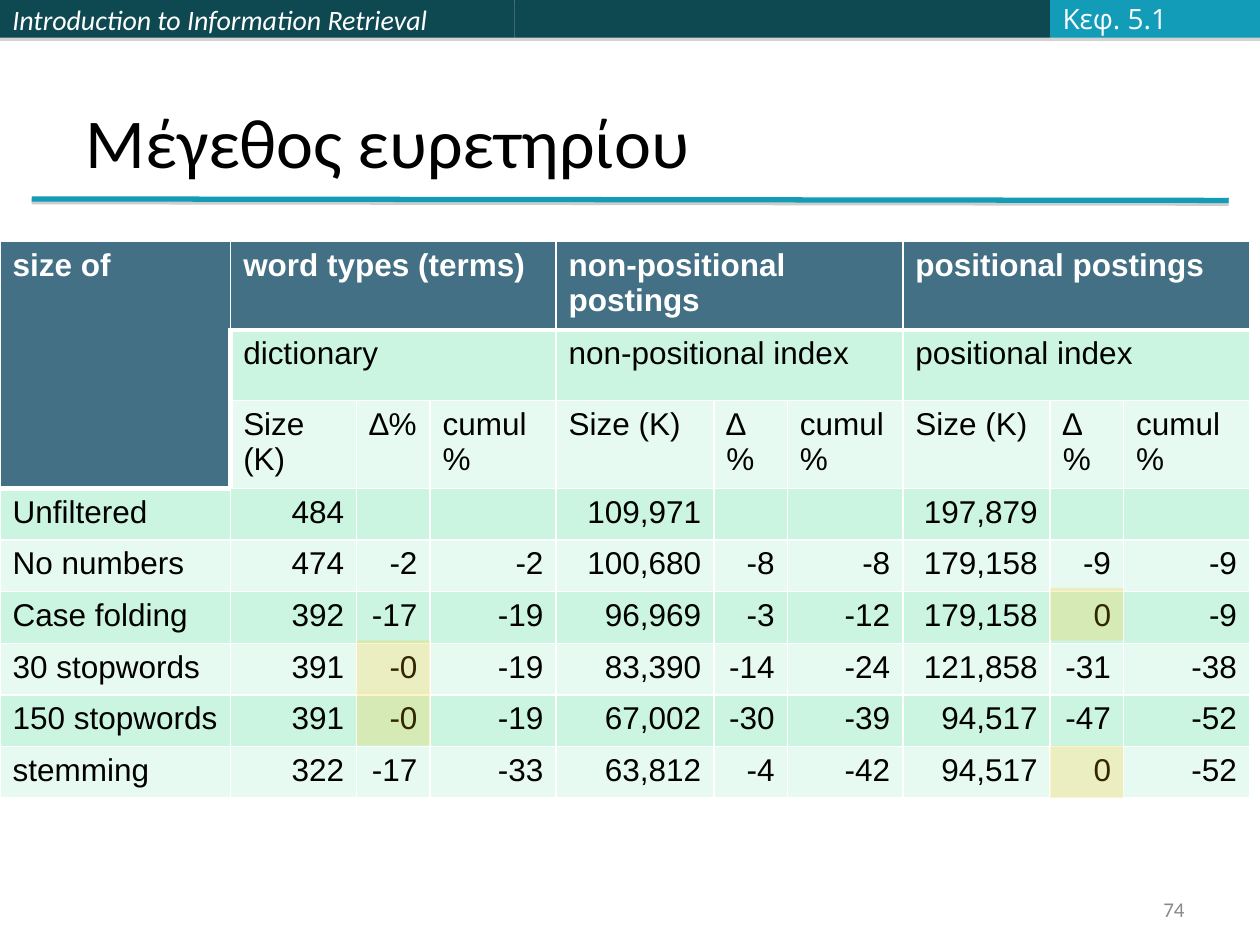
from lxml.etree import SubElement
from pptx import Presentation
from pptx.dml.color import RGBColor
from pptx.enum.shapes import MSO_CONNECTOR, MSO_SHAPE
from pptx.enum.text import MSO_ANCHOR, MSO_AUTO_SIZE, PP_ALIGN
from pptx.oxml.ns import qn
from pptx.util import Cm, Pt

# Content
TITLE = "Μέγεθος ευρετηρίου"
COURSE, PART, PAGE = "Introduction to Information Retrieval", "Κεφ. 5.1", "74"
GROUPS = [
    ("word types (terms)", "dictionary"),
    ("non-positional\npostings", "non-positional index"),
    ("positional postings", "positional index"),
]
HEADS = ["Size (K)", "∆%", "cumul %"] + ["Size (K)", "∆ %", "cumul %"] * 2
DATA = [
    ("Unfiltered", "484", "", "", "109,971", "", "", "197,879", "", ""),
    ("No numbers", "474", "-2", "-2", "100,680", "-8", "-8", "179,158", "-9", "-9"),
    ("Case folding", "392", "-17", "-19", "96,969", "-3", "-12", "179,158", "0", "-9"),
    ("30 stopwords", "391", "-0", "-19", "83,390", "-14", "-24", "121,858", "-31", "-38"),
    ("150 stopwords", "391", "-0", "-19", "67,002", "-30", "-39", "94,517", "-47", "-52"),
    ("stemming", "322", "-17", "-33", "63,812", "-4", "-42", "94,517", "0", "-52"),
]
MARKS = [8, 2, 2, 8]  # marked column in each row from "Case folding" on

THEME = dict(
    dark="0E4851", teal="139CB7", head="437085", odd="CBF5E1", even="E7FAF1",
    mark="FFC000", shade="808080", white="FFFFFF", pale="FBFCFF",
    black="000000", gray="898989",
    title=40, body=18, bar=16, page=12,
)

# Layout in centimetres
WIDE, HIGH = 25.4, 19.05
COLS = [4.65, 2.54, 1.48, 2.54, 3.18, 1.48, 2.33, 2.97, 1.48, 2.54]
ROWS = [1.7, 1.42, 1.09] + [1.04] * len(DATA)
TOP = 4.87
BARS = [(10.37, "dark"), (10.8, "dark"), (4.23, "teal")]
MARK_TOP, MARK_STEP = 11.85, 1.06


def rgb(name):
    return RGBColor.from_string(THEME[name])


def write(frame, words, size="body", font="Calibri", color="black", bold=False,
          italic=False, align=PP_ALIGN.LEFT, anchor=MSO_ANCHOR.MIDDLE, wrap=True):
    frame.word_wrap = wrap
    frame.vertical_anchor = anchor
    for i, line in enumerate(words.split("\n")):
        para = frame.add_paragraph() if i else frame.paragraphs[0]
        para.alignment = align
        run = para.add_run()
        run.text = line
        run.font.size, run.font.name = Pt(THEME[size]), font
        run.font.bold, run.font.italic = bold, italic
        run.font.color.rgb = rgb(color)


def label(slide, box, words, **form):
    frame = slide.shapes.add_textbox(*map(Cm, box)).text_frame
    write(frame, words, **form)
    return frame


def block(slide, box, color):
    shape = slide.shapes.add_shape(MSO_SHAPE.RECTANGLE, *map(Cm, box))
    shape.shadow.inherit = False
    shape.fill.solid()
    shape.fill.fore_color.rgb = rgb(color)
    shape.line.fill.background()
    return shape


def tint(node, name, alpha):
    color = SubElement(node, qn("a:srgbClr"), val=THEME[name])
    SubElement(color, qn("a:alpha"), val=str(alpha * 1000))


def shadow(shape, dist, alpha):
    props = shape._element.spPr
    list_ = props.find(qn("a:effectLst"))
    if list_ is None:
        list_ = SubElement(props, qn("a:effectLst"))
    outer = SubElement(list_, qn("a:outerShdw"), dist=str(Pt(dist)),
                       dir="5400000", algn="tl", rotWithShape="0")
    tint(outer, "shade", alpha)


def edges(cell, row, col):
    # Heavy edges part the headings from the body
    heavy = {
        "L": col == 1 and row in (1, 2),
        "R": False,
        "T": (row == 1 and col > 0) or (row == 3 and col == 0),
        "B": row == 0 or (row == 2 and col == 0),
    }
    props = cell._tc.get_or_add_tcPr()
    for side, thick in heavy.items():
        line = SubElement(props, qn("a:ln" + side), w=str(Pt(3 if thick else 1)))
        fill = SubElement(line, qn("a:solidFill"))
        SubElement(fill, qn("a:srgbClr"), val=THEME["white"])


def frame_top(slide):
    # Top bars, drawn side by side
    left = 0
    for i, (width, color) in enumerate(BARS):
        bar = block(slide, (left, 0, width, 0.76), color)
        shadow(bar, 1.8, 35)
        if i == 0:
            write(bar.text_frame, COURSE, size="bar", color="white", italic=True)
        left += width
    # Rule below the title
    rule = slide.shapes.add_connector(
        MSO_CONNECTOR.STRAIGHT, Cm(0.64), Cm(4.01), Cm(24.77), Cm(4.04))
    rule.line.color.rgb, rule.line.width = rgb("teal"), Pt(3)
    shadow(rule, 1.6, 38)
    label(slide, (1.48, 1.06, 23.28, 2.75), TITLE, size="title",
          anchor=MSO_ANCHOR.BOTTOM)


def grid(slide):
    table = slide.shapes.add_table(
        len(ROWS), len(COLS), Cm(0), Cm(TOP), Cm(sum(COLS)), Cm(sum(ROWS))).table
    table.first_row = table.horz_banding = False
    for col, width in zip(table.columns, COLS):
        col.width = Cm(width)
    for row, height in zip(table.rows, ROWS):
        row.height = Cm(height)

    # Headings span three columns each
    tops, subs = ["size of"], [""]
    for top, sub in GROUPS:
        tops += [top, "", ""]
        subs += [sub, "", ""]
    lines = [tops, subs, [""] + HEADS, *DATA]
    table.cell(0, 0).merge(table.cell(2, 0))
    for row in (0, 1):
        for col in (1, 4, 7):
            table.cell(row, col).merge(table.cell(row, col + 2))

    for r, line in enumerate(lines):
        for c, words in enumerate(line):
            cell = table.cell(r, c)
            head = r == 0 or (c == 0 and r < 3)
            edges(cell, r, c)
            cell.fill.solid()
            cell.fill.fore_color.rgb = rgb("head" if head else "odd" if r % 2 else "even")
            if words:
                write(cell.text_frame, words, font="Arial", bold=head,
                      color="white" if head else "black", anchor=MSO_ANCHOR.TOP,
                      align=PP_ALIGN.RIGHT if r > 2 and c else PP_ALIGN.LEFT)


def marks(slide):
    # Clear yellow patches over the zero changes
    for i, col in enumerate(MARKS):
        box = (sum(COLS[:col]), MARK_TOP + i * MARK_STEP, COLS[col], MARK_STEP)
        patch = block(slide, box, "mark")
        color = patch._element.spPr.find(qn("a:solidFill"))[0]
        SubElement(color, qn("a:alpha"), val="20000")


def main():
    deck = Presentation()
    deck.slide_width, deck.slide_height = Cm(WIDE), Cm(HIGH)
    slide = deck.slides.add_slide(deck.slide_layouts[6])
    frame_top(slide)
    grid(slide)
    marks(slide)
    # Chapter and page number
    part = label(slide, (21.17, -0.1, 2.79, 0.94), PART, size="bar",
                 font="Open Sans", color="pale", wrap=False)
    part.auto_size = MSO_AUTO_SIZE.SHAPE_TO_FIT_TEXT
    label(slide, (18.2, 17.98, 5.93, 0.69), PAGE, size="page", color="gray",
          align=PP_ALIGN.RIGHT)
    deck.save("out.pptx")


if __name__ == "__main__":
    main()
